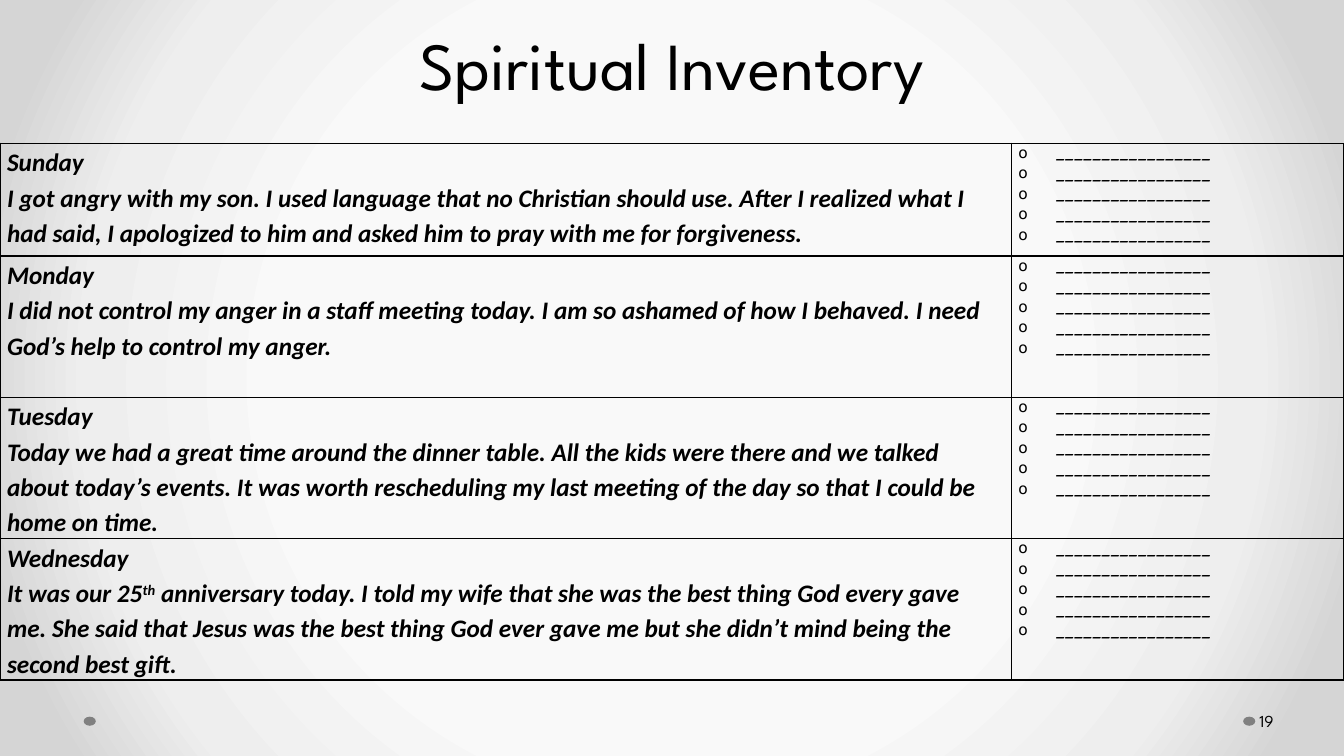
from lxml import etree
from pptx import Presentation
from pptx.dml.color import RGBColor
from pptx.enum.shapes import MSO_SHAPE
from pptx.enum.text import MSO_ANCHOR, PP_ALIGN
from pptx.oxml import parse_xml
from pptx.oxml.ns import qn
from pptx.util import Inches, Pt

BLACK = RGBColor(0x00, 0x00, 0x00)
GRAY = RGBColor(0x80, 0x80, 0x80)
OVAL = MSO_SHAPE.OVAL
CENTER, LEFT = PP_ALIGN.CENTER, PP_ALIGN.LEFT
BOTTOM, MIDDLE = MSO_ANCHOR.BOTTOM, MSO_ANCHOR.MIDDLE
DRAWING_NS = "http://schemas.openxmlformats.org/drawingml/2006/main"
BACKGROUND_STOPS = [(50, "F9F9F9"), (76, "EEEEEE"), (92, "D5D5D5")]
BLANK_LINE = "_" * 17
BLANKS_PER_DAY = 5
JOURNAL = [
    ("Sunday", ["I got angry with my son. I used language that no Christian should use. "
                "After I realized what I had said, I apologized to him and asked him to pray "
                "with me for forgiveness."], 1.12),
    ("Monday", ["I did not control my anger in a staff meeting today. I am so ashamed of how "
                "I behaved. I need God’s help to control my anger."], 1.4),
    ("Tuesday", ["Today we had a great time around the dinner table. All the kids were there "
                 "and we talked about today’s events. It was worth rescheduling my last "
                 "meeting of the day so that I could be home on time."], 1.4),
    ("Wednesday", ["It was our 25", "th",
                   " anniversary today. I told my wife that she was the best thing God every "
                   "gave me. She said that Jesus was the best thing God ever gave me but she "
                   "didn’t mind being the second best gift."], 1.4),
]


def style_run(run, font_name, size, emphasis=False):
    run.font.name = font_name
    run.font.size = Pt(size)
    run.font.bold = run.font.italic = emphasis
    run.font.color.rgb = BLACK


def style_cell(cell):
    cell.margin_left = cell.margin_right = Inches(0.07)
    cell.margin_top = cell.margin_bottom = 0
    cell.fill.background()
    properties = cell._tc.get_or_add_tcPr()
    for position, side in enumerate(("lnL", "lnR", "lnT", "lnB")):
        properties.insert(position, parse_xml(
            f'<a:{side} xmlns:a="{DRAWING_NS}" w="12700"><a:solidFill>'
            f'<a:srgbClr val="{BLACK}"/></a:solidFill></a:{side}>'))


prs = Presentation()
prs.slide_width, prs.slide_height = Inches(13.33), Inches(7.5)
slide = prs.slides.add_slide(prs.slide_layouts[5])

slide.background.fill.solid()
background = slide._element.find(".//" + qn("p:bgPr"))
stops = "".join(f'<a:gs pos="{percent * 1000}"><a:srgbClr val="{color}"/></a:gs>'
                for percent, color in BACKGROUND_STOPS)
background.replace(background[0], parse_xml(
    f'<a:gradFill xmlns:a="{DRAWING_NS}"><a:gsLst>{stops}</a:gsLst><a:path path="circle">'
    '<a:fillToRect l="50000" t="50000" r="50000" b="50000"/></a:path></a:gradFill>'))

for dot_left in (12.33, 0.83):
    dot = slide.shapes.add_shape(OVAL, Inches(dot_left), Inches(7.11), Inches(0.12), Inches(0.09))
    dot.shadow.inherit = False
    dot.fill.solid()
    dot.fill.fore_color.rgb = GRAY
    dot.line.fill.background()

title = slide.shapes.title
title.left, title.top, title.width, title.height = 0, 0, Inches(13.33), Inches(1.75)
title.text_frame.text = "Spiritual Inventory"
title.text_frame.vertical_anchor = BOTTOM
title.text_frame.margin_bottom = Inches(0.72)
heading = title.text_frame.paragraphs[0]
heading.alignment = CENTER
heading.line_spacing = Pt(48)
style_run(heading.runs[0], "League Spartan", 48)

table_height = sum(height for _, _, height in JOURNAL)
inventory = slide.shapes.add_table(len(JOURNAL), 2, 0, Inches(1.42),
                                   Inches(13.33), Inches(table_height)).table
inventory.first_row = inventory.horz_banding = False
inventory.columns[0].width, inventory.columns[1].width = Inches(10.03), Inches(3.3)

for row, (day, entry_parts, height) in zip(inventory.rows, JOURNAL):
    row.height = Inches(height)
    entry_cell, blanks_cell = row.cells
    style_cell(entry_cell)
    style_cell(blanks_cell)

    entry_cell.text_frame.text = day
    entry = entry_cell.text_frame.add_paragraph()
    for part in entry_parts:
        run = entry.add_run()
        run.text = part
        if part == "th":
            run._r.get_or_add_rPr().set("baseline", "30000")
    for paragraph in entry_cell.text_frame.paragraphs:
        paragraph.line_spacing = 1.15
        for run in paragraph.runs:
            style_run(run, "Calibri", 18, emphasis=True)

    blanks_cell.text_frame.text = "\n".join([BLANK_LINE] * BLANKS_PER_DAY)
    for paragraph in blanks_cell.text_frame.paragraphs:
        paragraph.line_spacing = 1.15
        style_run(paragraph.runs[0], "Comic Neue", 11, emphasis=True)
        indents = paragraph._p.get_or_add_pPr()
        indents.set("marL", str(Inches(0.38)))
        indents.set("indent", str(Inches(-0.38)))
        etree.SubElement(indents, qn("a:buChar")).set("char", "o")

page_number = slide.shapes.add_textbox(Inches(12.46), Inches(6.95), Inches(0.82), Inches(0.4))
page_number.text_frame.word_wrap = True
page_number.text_frame.vertical_anchor = MIDDLE
page_number.text_frame.margin_left = Inches(0.03)
page_number.text_frame.margin_right = Inches(0.05)
page_number.text_frame.text = "19"
page_number.text_frame.paragraphs[0].alignment = LEFT
style_run(page_number.text_frame.paragraphs[0].runs[0], "League Spartan", 12)

prs.save("out.pptx")
